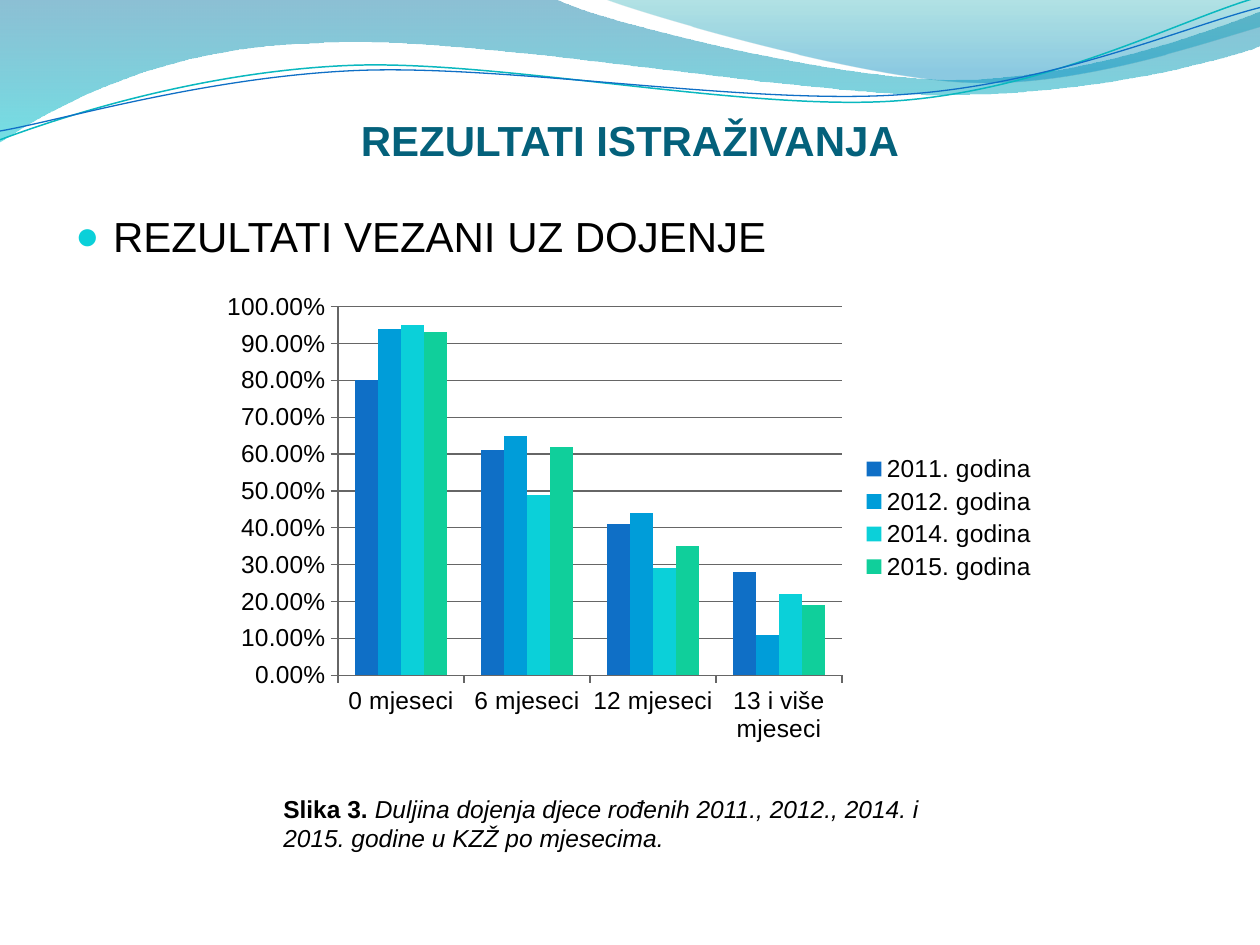
import pptx
import pptx.chart.data
import pptx.dml.color
import pptx.enum.chart
import pptx.enum.text
import pptx.oxml
import pptx.oxml.ns
import pptx.util

PX = 9144  # EMU per px, 100 px to the inch
COLORS = {
    "title": "04617B", "text": "000000", "bullet": "0BD0D9", "axis": "666666",
    "band_top": "0074A1", "band_bottom": "00C6CF",
    "corner_top": "00A1A9", "corner_bottom": "008BBF",
    "teal_line": "0AB8BF", "blue_line": "0F6FC6",
    "2011": "0F6FC6", "2012": "009DD9", "2014": "0BD0D9", "2015": "10CF9B",
}
CATEGORIES = ["0 mjeseci", "6 mjeseci", "12 mjeseci", "13 i više mjeseci"]
SERIES = {
    "2011": (0.80, 0.61, 0.41, 0.28),
    "2012": (0.94, 0.65, 0.44, 0.11),
    "2014": (0.95, 0.49, 0.29, 0.22),
    "2015": (0.93, 0.62, 0.35, 0.19),
}


def rgb(name):
    return pptx.dml.color.RGBColor.from_string(COLORS[name])


def emu(*lengths):
    return [pptx.util.Emu(length * PX) for length in lengths]


def set_values(target, values):
    for name, value in values.items():
        setattr(target, name, value)


def set_font(font, size, color="text", **values):
    set_values(font, {"name": "Arial", "size": pptx.util.Pt(size), **values})
    font.color.rgb = rgb(color)


def add_outline(slide, box, segments, close):
    """Draw 2-number segments as lines and 6-number segments as cubic curves."""
    left, top = box[:2]
    points = [(left + segment[i], top + segment[i + 1])
              for segment in segments for i in range(0, len(segment), 2)]
    builder = slide.shapes.build_freeform(*points[0], scale=PX)
    builder.add_line_segments(points[1:], close=close)
    shape = builder.convert_to_shape()
    shape.shadow.inherit = False

    # Merge the three line ends of each curve into one Bezier element
    line_ends = iter(list(shape.element.iter(pptx.oxml.ns.qn("a:lnTo"))))
    for segment in segments[1:]:
        first = next(line_ends)
        if len(segment) == 6:
            curve = first.makeelement(pptx.oxml.ns.qn("a:cubicBezTo"), {})
            first.addprevious(curve)
            for line_end in (first, next(line_ends), next(line_ends)):
                curve.append(line_end[0])
                line_end.getparent().remove(line_end)
    return shape


def add_wave_area(slide, box, segments, stops):
    shape = add_outline(slide, box, segments, True)
    shape.line.fill.background()
    shape.fill.gradient()
    shape.fill.gradient_angle = 270
    for stop, (position, color, opacity) in zip(shape.fill.gradient_stops, stops):
        stop.position = position
        stop.color.rgb = rgb(color)
    for element, (_, _, opacity) in zip(shape.element.iter(pptx.oxml.ns.qn("a:srgbClr")), stops):
        alpha = element.makeelement(pptx.oxml.ns.qn("a:alpha"), {"val": str(opacity * 1000)})
        element.append(alpha)


def add_wave_line(slide, box, segments, color, width):
    shape = add_outline(slide, box, segments, False)
    shape.fill.background()
    shape.line.color.rgb = rgb(color)
    shape.line.width = pptx.util.Pt(width)


def add_header(slide, box):
    # Translucent wave areas
    add_wave_area(slide, box, [
        (0, 0), (440, -1), (476, 17, 664, 63, 758, 63), (853, 63, 958, 26, 1000, 9),
        (1001, 36), (983, 44, 870, 76, 746, 75), (622, 75, 382, 28, 257, 34),
        (129, 36, 46, 83, -1, 113), (0, 0),
    ], [(0, "band_top", 45), (1, "band_bottom", 55)])
    add_wave_area(slide, box, [
        (479, -1), (509, 11, 682, 62, 769, 65), (856, 69, 961, 32, 1000, 21),
        (1000, 0), (479, -1),
    ], [(0, "corner_top", 30), (0.8, "corner_bottom", 45)])
    # Thin wave lines
    add_wave_line(slide, box, [
        (0, 111), (48, 93, 158, 57, 277, 52), (395, 47, 593, 89, 713, 80),
        (833, 71, 938, 15, 998, -2),
    ], "teal_line", 0.85)
    add_wave_line(slide, box, [
        (0, 104), (47, 96, 164, 61, 283, 56), (403, 51, 597, 84, 717, 75),
        (836, 67, 941, 21, 1000, 6),
    ], "blue_line", 0.75)


def add_text(slide, box, runs, **frame_values):
    """Add one paragraph; runs are (text, size, font values)."""
    frame = slide.shapes.add_textbox(*emu(*box)).text_frame
    set_values(frame, {"word_wrap": True, **frame_values})
    paragraph = frame.paragraphs[0]
    for text, size, values in runs:
        run = paragraph.add_run()
        run.text = text
        set_font(run.font, size, **values)
    return paragraph


def add_title(slide, box):
    paragraph = add_text(
        slide, box, [("REZULTATI ISTRAŽIVANJA", 24, {"color": "title", "bold": True})],
        vertical_anchor=pptx.enum.text.MSO_ANCHOR.BOTTOM,
        margin_left=0, margin_right=0, margin_bottom=0)
    paragraph.alignment = pptx.enum.text.PP_ALIGN.CENTER


def add_body(slide, box):
    paragraph = add_text(slide, box, [("REZULTATI VEZANI UZ DOJENJE", 24, {})])
    paragraph.space_before = pptx.util.Pt(4.8)
    properties = paragraph._p.get_or_add_pPr()
    indent = 30 * PX
    properties.set("marL", str(indent))
    properties.set("indent", str(-indent))
    namespace = pptx.oxml.ns.nsdecls("a")
    for bullet in (
        f'<a:buClr {namespace}><a:srgbClr val="{COLORS["bullet"]}"/></a:buClr>',
        f'<a:buSzPct {namespace} val="95000"/>',
        f'<a:buFont {namespace} typeface="Arial"/>',
        f'<a:buChar {namespace} char="●"/>',
    ):
        properties.append(pptx.oxml.parse_xml(bullet))


def add_caption(slide, box):
    add_text(slide, box, [
        ("Slika 3. ", 14, {"bold": True}),
        ("Duljina dojenja djece rođenih 2011., 2012., 2014. i 2015. godine u KZŽ po mjesecima.",
         14, {"italic": True}),
    ], auto_size=pptx.enum.text.MSO_AUTO_SIZE.SHAPE_TO_FIT_TEXT)


def add_column_chart(slide, box):
    data = pptx.chart.data.CategoryChartData(number_format="0.00%")
    data.categories = CATEGORIES
    for year, values in SERIES.items():
        data.add_series(f"{year}. godina", values)
    chart = slide.shapes.add_chart(
        pptx.enum.chart.XL_CHART_TYPE.COLUMN_CLUSTERED, *emu(*box), data).chart
    set_font(chart.font, 18, name="Cambria")
    chart.has_title = False

    # Columns
    plot = chart.plots[0]
    set_values(plot, {"gap_width": 150, "overlap": 0, "vary_by_categories": False})
    for year, series in zip(SERIES, plot.series):
        series.format.fill.solid()
        series.format.fill.fore_color.rgb = rgb(year)

    # Axes and gridlines
    set_values(chart.value_axis, {"minimum_scale": 0, "maximum_scale": 1, "major_unit": 0.1,
                                  "has_major_gridlines": True})
    set_values(chart.value_axis.tick_labels,
               {"number_format": "0.00%", "number_format_is_linked": False})
    for axis in (chart.category_axis, chart.value_axis):
        axis.major_tick_mark = pptx.enum.chart.XL_TICK_MARK.OUTSIDE
        set_font(axis.tick_labels.font, 14)
    for part in (chart.category_axis, chart.value_axis, chart.value_axis.major_gridlines):
        part.format.line.color.rgb = rgb("axis")
        part.format.line.width = pptx.util.Pt(0.75)

    # Legend
    chart.has_legend = True
    set_values(chart.legend, {"position": pptx.enum.chart.XL_LEGEND_POSITION.RIGHT,
                              "include_in_layout": False})
    set_font(chart.legend.font, 14)


def main():
    presentation = pptx.Presentation()
    presentation.slide_width, presentation.slide_height = emu(1000, 750)
    slide = presentation.slides.add_slide(presentation.slide_layouts[6])
    add_header(slide, (0, 0, 1000, 113))
    add_title(slide, (50, 52, 900, 79))
    add_body(slide, (50, 162, 900, 529))
    add_caption(slide, (215, 625, 560, 57))
    add_column_chart(slide, (167, 225, 666, 372))
    presentation.save("out.pptx")


if __name__ == "__main__":
    main()
